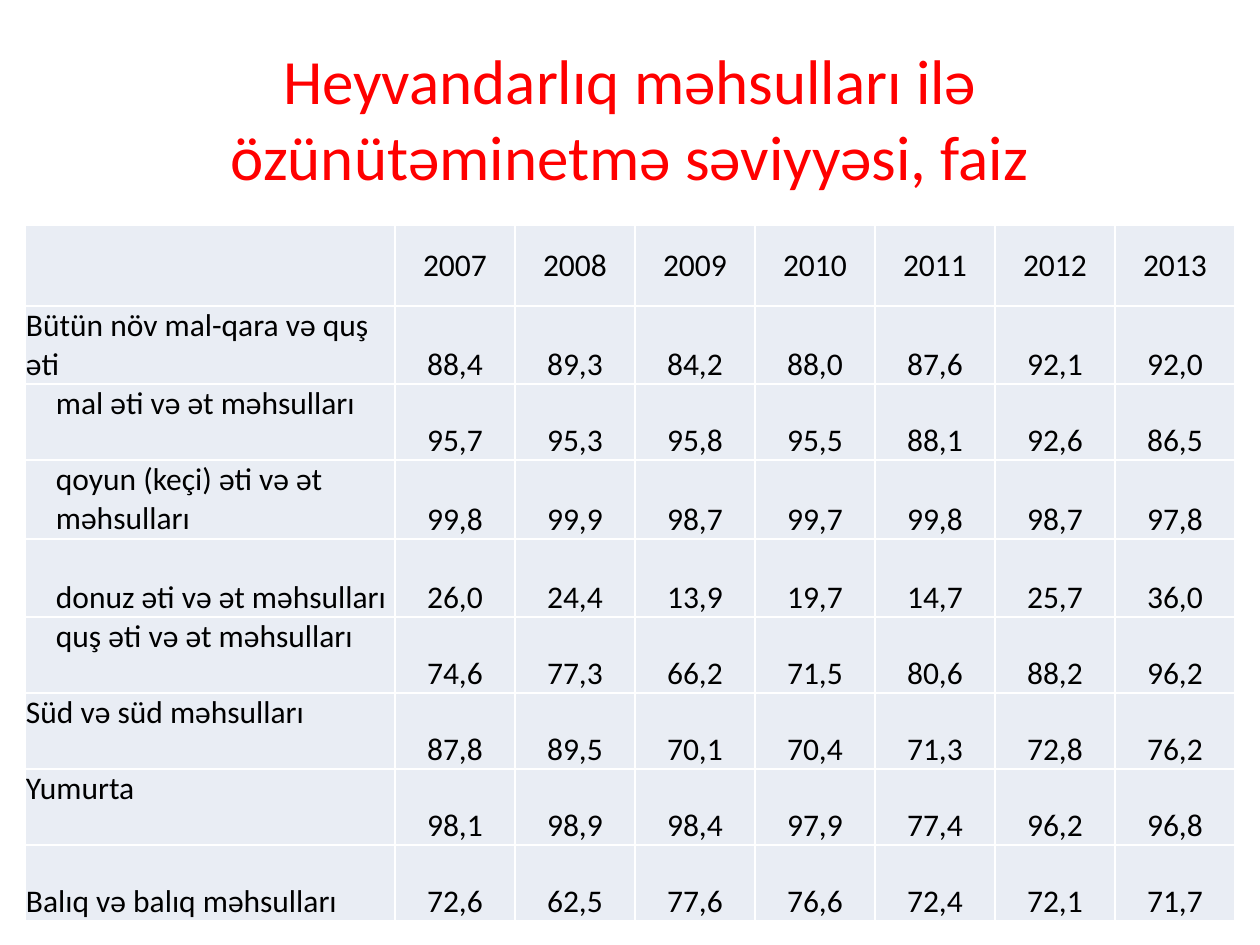
"""Builds a slide with a title and a table of self-sufficiency in animal products."""
import lxml.etree
import pptx
import pptx.dml.color
import pptx.enum.text
import pptx.oxml.ns
import pptx.util

EMU_PER_PX = 914400 / 126
COLORS = {"title": "FF0000", "text": "000000", "cell": "E9EDF4", "border": "FFFFFF"}
ALIGN = pptx.enum.text.PP_ALIGN
ANCHOR = pptx.enum.text.MSO_ANCHOR
INDENT = 31
YEARS = range(2007, 2014)
ROW_HEIGHTS = [81, 78, 76, 79, 78, 76, 76, 76, 76]
PRODUCTS = [
    ("Bütün növ mal-qara və quş əti", 1, ANCHOR.TOP, "88,4 89,3 84,2 88,0 87,6 92,1 92,0"),
    ("mal əti və ət məhsulları", INDENT, ANCHOR.TOP, "95,7 95,3 95,8 95,5 88,1 92,6 86,5"),
    ("qoyun (keçi) əti və ət məhsulları", INDENT, ANCHOR.TOP, "99,8 99,9 98,7 99,7 99,8 98,7 97,8"),
    ("donuz əti və ət məhsulları", INDENT, ANCHOR.BOTTOM, "26,0 24,4 13,9 19,7 14,7 25,7 36,0"),
    ("quş əti və ət məhsulları", INDENT, ANCHOR.TOP, "74,6 77,3 66,2 71,5 80,6 88,2 96,2"),
    ("Süd və süd məhsulları", 1, ANCHOR.TOP, "87,8 89,5 70,1 70,4 71,3 72,8 76,2"),
    ("Yumurta", 1, ANCHOR.TOP, "98,1 98,9 98,4 97,9 77,4 96,2 96,8"),
    ("Balıq və balıq məhsulları", 1, ANCHOR.BOTTOM, "72,6 62,5 77,6 76,6 72,4 72,1 71,7"),
]


def px(n):
    return pptx.util.Emu(round(n * EMU_PER_PX))


def rgb(name):
    return pptx.dml.color.RGBColor.from_string(COLORS[name])


def set_attrs(obj, values):
    for name, value in values.items():
        setattr(obj, name, value)


def write(tf, text, size, color, align):
    p = tf.paragraphs[0]
    p.alignment = align
    r = p.add_run()
    r.text = text
    set_attrs(r.font, {"name": "Calibri", "size": pptx.util.Pt(size)})
    r.font.color.rgb = rgb(color)


def add_title(s, text):
    tf = s.shapes.add_textbox(px(63), px(38), px(1134), px(158)).text_frame
    set_attrs(tf, {"word_wrap": True, "vertical_anchor": ANCHOR.MIDDLE})
    write(tf, text, 36, "title", ALIGN.CENTER)


def add_borders(cell):
    qn = pptx.oxml.ns.qn
    tcPr = cell._tc.get_or_add_tcPr()
    for i, side in enumerate(("a:lnL", "a:lnR", "a:lnT", "a:lnB")):
        ln = lxml.etree.Element(qn(side), w=str(pptx.util.Pt(1)))
        fill = lxml.etree.SubElement(ln, qn("a:solidFill"))
        lxml.etree.SubElement(fill, qn("a:srgbClr"), val=COLORS["border"])
        tcPr.insert(i, ln)


def fill_cell(cell, text, align, anchor, left=1):
    set_attrs(cell, {"margin_left": px(left), "margin_top": px(1), "margin_right": px(1),
                     "margin_bottom": 0, "vertical_anchor": anchor})
    cell.fill.solid()
    cell.fill.fore_color.rgb = rgb("cell")
    add_borders(cell)
    if text:
        write(cell.text_frame, text, 18, "text", align)


def add_product_table(s):
    widths = [370] + [120] * len(YEARS)
    table = s.shapes.add_table(len(ROW_HEIGHTS), len(widths), px(25), px(225),
                               px(sum(widths)), px(sum(ROW_HEIGHTS))).table
    set_attrs(table, {"first_row": False, "horz_banding": False})
    for col, width in zip(table.columns, widths):
        col.width = px(width)
    for row, height in zip(table.rows, ROW_HEIGHTS):
        row.height = px(height)
    for c, text in enumerate(["", *map(str, YEARS)]):
        fill_cell(table.cell(0, c), text, ALIGN.CENTER, ANCHOR.MIDDLE)
    for r, (product, left, anchor, values) in enumerate(PRODUCTS, 1):
        fill_cell(table.cell(r, 0), product, ALIGN.LEFT, anchor, left)
        for c, value in enumerate(values.split(), 1):
            fill_cell(table.cell(r, c), value, ALIGN.CENTER, ANCHOR.BOTTOM)


def main():
    prs = pptx.Presentation()
    set_attrs(prs, {"slide_width": px(1260), "slide_height": px(945)})
    s = prs.slides.add_slide(prs.slide_layouts[6])
    add_title(s, "Heyvandarlıq məhsulları ilə özünütəminetmə səviyyəsi, faiz")
    add_product_table(s)
    prs.save("out.pptx")


if __name__ == "__main__":
    main()
